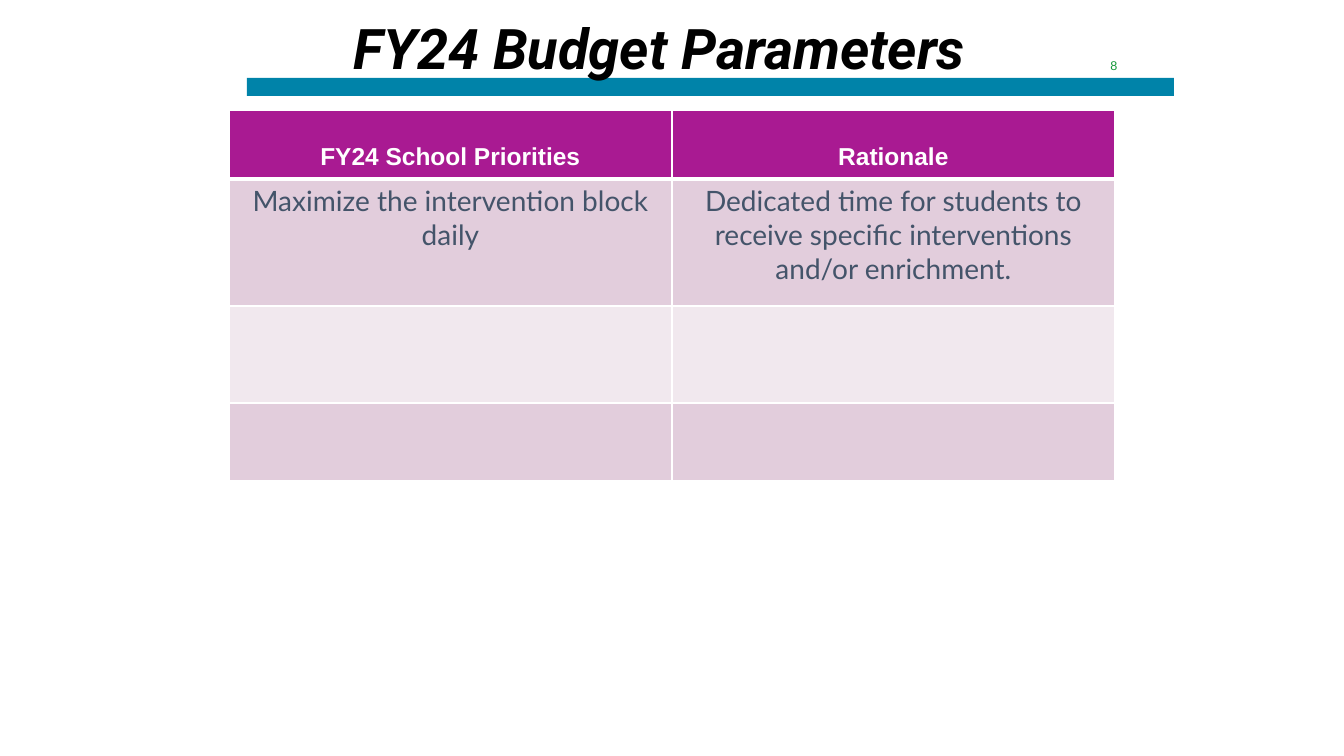
"""Build the FY24 budget parameters slide."""
from dataclasses import dataclass

import lxml.etree
import pptx
import pptx.dml.color
import pptx.enum.shapes
import pptx.enum.text
import pptx.oxml.ns
import pptx.util

EMU_PER_PX = 914400 / 100.8
ANCHOR = pptx.enum.text.MSO_ANCHOR
PRIORITIES = [
    ("FY24 School Priorities", "Rationale"),
    ("Maximize the intervention block daily",
     "Dedicated time for students to receive specific interventions and/or enrichment."),
    ("", ""),
    ("", ""),
]


@dataclass(frozen=True)
class Theme:
    accent: str = "0083A9"
    header: str = "A91A92"
    band_dark: str = "E2CDDC"
    band_light: str = "F1E8EE"
    white: str = "FFFFFF"
    title_ink: str = "000000"
    body_ink: str = "44546A"
    number_ink: str = "159839"
    title_size: float = 40
    header_size: float = 17.5
    body_size: float = 20
    number_size: float = 9


THEME = Theme()


def px(length):
    return pptx.util.Emu(round(length * EMU_PER_PX))


def rgb(value):
    return pptx.dml.color.RGBColor.from_string(value)


def write(frame, text, *, size, color, font="Arial", bold=False, italic=False):
    frame.word_wrap = True
    paragraph = frame.paragraphs[0]
    paragraph.alignment = pptx.enum.text.PP_ALIGN.CENTER
    run = paragraph.add_run()
    run.text = text
    run.font.name = font
    run.font.size = pptx.util.Pt(size)
    run.font.bold = bold
    run.font.italic = italic
    run.font.color.rgb = rgb(color)


def add_label(slide, box, text, anchor=ANCHOR.TOP, **style):
    label = slide.shapes.add_textbox(*map(px, box)).text_frame
    label.vertical_anchor = anchor
    write(label, text, **style)


def add_bar(slide, box, color):
    bar = slide.shapes.add_shape(pptx.enum.shapes.MSO_SHAPE.RECTANGLE, *map(px, box))
    bar.shadow.inherit = False
    bar.fill.solid()
    bar.fill.fore_color.rgb = rgb(color)
    bar.line.fill.background()


def set_borders(cell, widths):
    properties = cell._tc.get_or_add_tcPr()
    qn = pptx.oxml.ns.qn
    for position, (side, width) in enumerate(widths.items()):
        border = lxml.etree.Element(qn(f"a:ln{side}"), w=str(pptx.util.Pt(width)))
        fill = lxml.etree.SubElement(border, qn("a:solidFill"))
        lxml.etree.SubElement(fill, qn("a:srgbClr"), val=THEME.white)
        properties.insert(position, border)


def style_cell(cell, text, row):
    is_header = row == 0
    band = THEME.band_dark if row % 2 else THEME.band_light
    cell.fill.solid()
    cell.fill.fore_color.rgb = rgb(THEME.header if is_header else band)
    set_borders(cell, {"L": 1, "R": 1, "T": 3 if row == 1 else 1, "B": 3 if is_header else 1})
    if is_header:
        cell.vertical_anchor = ANCHOR.BOTTOM
        cell.margin_bottom = px(8)
        write(cell.text_frame, text, size=THEME.header_size, color=THEME.white, bold=True)
    elif text:
        write(cell.text_frame, text, size=THEME.body_size, color=THEME.body_ink, font="Lato")


def add_priorities(slide, left, top, column_width, row_heights):
    columns = len(PRIORITIES[0])
    table = slide.shapes.add_table(
        len(PRIORITIES), columns, px(left), px(top),
        px(columns * column_width), px(sum(row_heights))).table
    for column in table.columns:
        column.width = px(column_width)
    for row, (texts, height) in enumerate(zip(PRIORITIES, row_heights)):
        table.rows[row].height = px(height)
        for column, text in enumerate(texts):
            style_cell(table.cell(row, column), text, row)


def main():
    deck = pptx.Presentation()
    deck.slide_width, deck.slide_height = px(1344), px(756)
    slide = deck.slides.add_slide(deck.slide_layouts[6])
    add_bar(slide, (247, 78, 927, 18), THEME.accent)
    add_label(slide, (307, 9, 705, 78), "FY24 Budget Parameters", size=THEME.title_size,
              color=THEME.title_ink, font="Roboto", bold=True, italic=True)
    add_priorities(slide, 229, 110, 443, (69, 127, 97, 78))
    add_label(slide, (1073, 50, 82, 30), "8", anchor=ANCHOR.MIDDLE,
              size=THEME.number_size, color=THEME.number_ink)
    deck.save("out.pptx")


if __name__ == "__main__":
    main()
